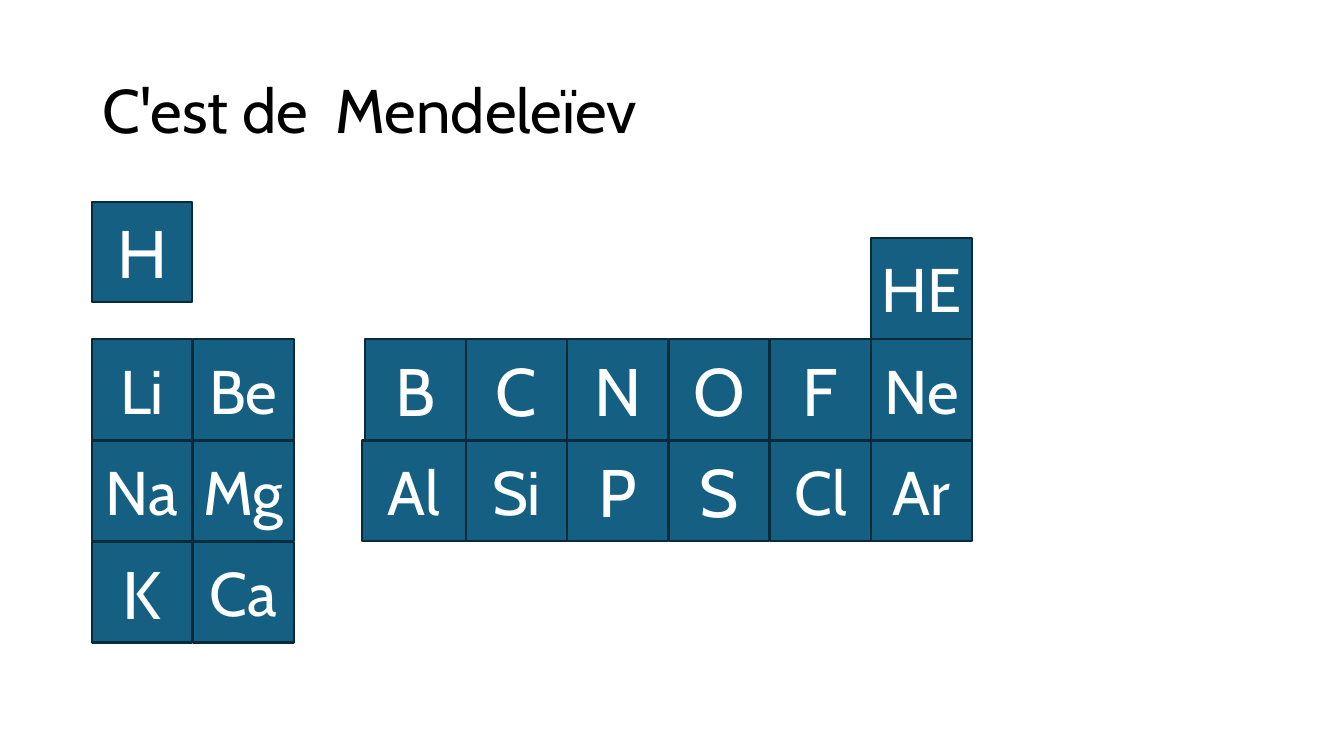
from dataclasses import dataclass

from pptx import Presentation
from pptx.dml.color import RGBColor
from pptx.enum.shapes import MSO_SHAPE
from pptx.enum.text import MSO_ANCHOR, PP_ALIGN
from pptx.util import Pt

RECT = MSO_SHAPE.RECTANGLE
MIDDLE = MSO_ANCHOR.MIDDLE
CENTER = PP_ALIGN.CENTER

PX = 4572  # 200 px to the inch


@dataclass(frozen=True)
class Theme:
    face: str = "Cabin"
    ink: str = "000000"
    tile: str = "156082"
    edge: str = "092A39"
    light: str = "FFFFFF"
    title: int = 44
    single: int = 48
    double: int = 44
    line: float = 1.5


class Board:
    def __init__(self, slide, theme):
        self.slide = slide
        self.theme = theme

    def label(self, frame, text, size, color):
        frame.text = text
        frame.word_wrap = True
        frame.vertical_anchor = MIDDLE
        para = frame.paragraphs[0]
        font = para.runs[0].font
        font.name = self.theme.face
        font.size = Pt(size)
        font.color.rgb = RGBColor.from_string(color)
        return para

    def title(self, text, *box):
        shape = self.slide.shapes.add_textbox(*(n * PX for n in box))
        para = self.label(shape.text_frame, text, self.theme.title, self.theme.ink)
        para.line_spacing = 0.9

    def tile(self, text, *box):
        theme = self.theme
        shape = self.slide.shapes.add_shape(RECT, *(n * PX for n in box))
        shape.shadow.inherit = False
        shape.fill.solid()
        shape.fill.fore_color.rgb = RGBColor.from_string(theme.tile)
        shape.line.color.rgb = RGBColor.from_string(theme.edge)
        shape.line.width = Pt(theme.line)
        frame = shape.text_frame
        frame.margin_left = frame.margin_right = 0
        size = theme.single if len(text) == 1 else theme.double
        self.label(frame, text, size, theme.light).alignment = CENTER


# Tile grid
SIDE, STEP = 200, 201
LEFT, RIGHT, TOP = 182, 724, 673
METALS = ["Li Be", "Na Mg", "K Ca"]
OTHERS = ["B C N O F Ne", "Al Si P S Cl Ar"]


def main():
    deck = Presentation()
    deck.slide_width, deck.slide_height = 2667 * PX, 1500 * PX
    board = Board(deck.slides.add_slide(deck.slide_layouts[6]), Theme())

    # Heading
    board.title("C'est de  Mendeleïev", 184, 80, 2300, 290)

    # First period
    board.tile("H", LEFT, 400, SIDE, SIDE)
    board.tile("HE", RIGHT + 5 * STEP, TOP - STEP, SIDE, SIDE)

    # Lower periods
    for start, block in ((LEFT, METALS), (RIGHT, OTHERS)):
        for row, names in enumerate(block):
            for col, name in enumerate(names.split()):
                extra = 5 if name == "Al" else 0  # slightly wider to the left
                board.tile(name, start + col * STEP - extra, TOP + row * STEP,
                           SIDE + extra, SIDE)

    deck.save("out.pptx")


if __name__ == "__main__":
    main()
